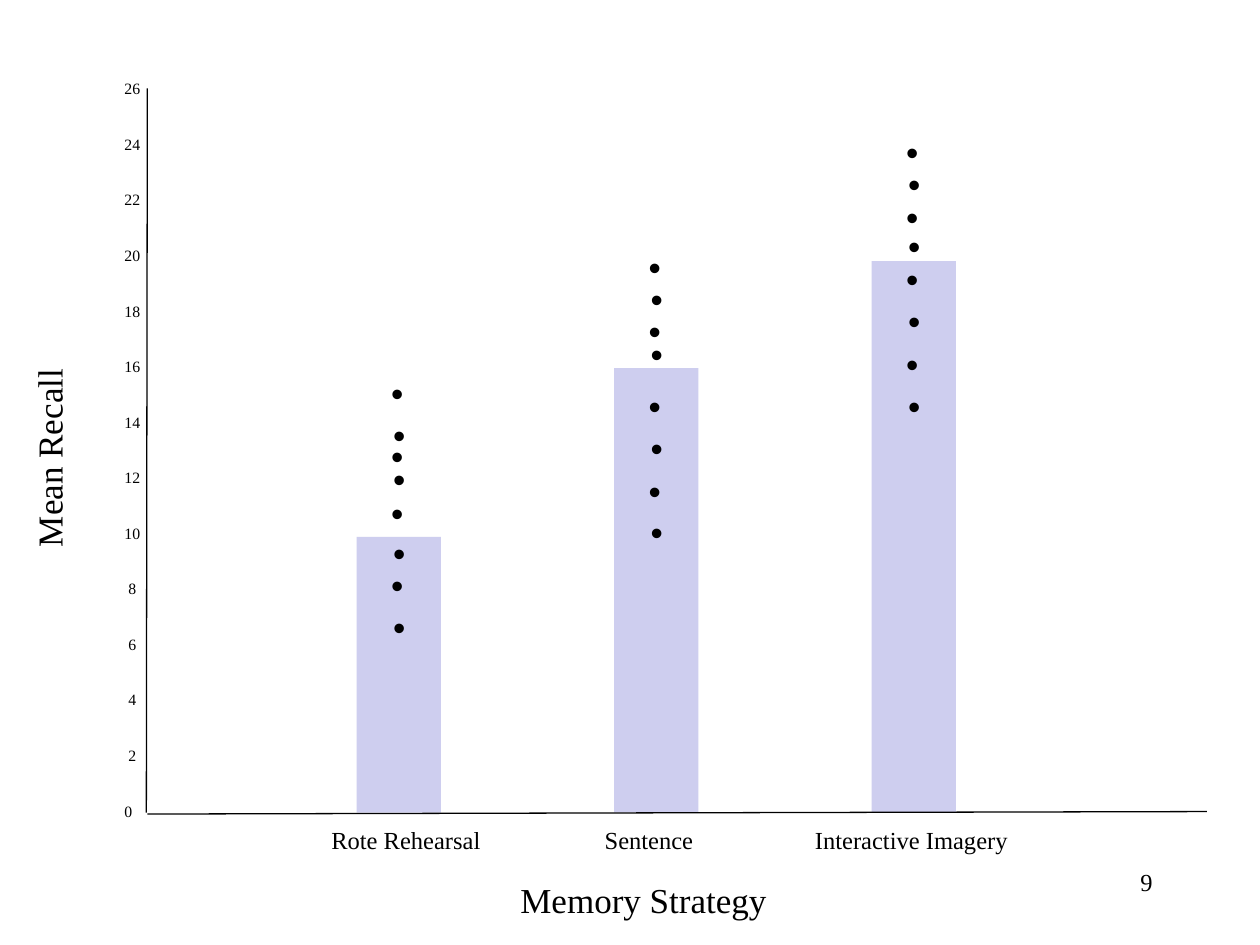
from pptx import Presentation
from pptx.dml.color import RGBColor
from pptx.enum.shapes import MSO_CONNECTOR, MSO_SHAPE
from pptx.enum.text import MSO_AUTO_SIZE, PP_ALIGN
from pptx.oxml.ns import qn
from pptx.util import Cm, Pt
from lxml import etree

RECT = MSO_SHAPE.RECTANGLE
STRAIGHT = MSO_CONNECTOR.STRAIGHT
GROW = MSO_AUTO_SIZE.SHAPE_TO_FIT_TEXT
LEFT, CENTER, RIGHT = PP_ALIGN.LEFT, PP_ALIGN.CENTER, PP_ALIGN.RIGHT

THEME = {
    "ink": RGBColor(0x00, 0x00, 0x00),
    "bar": RGBColor(0xCE, 0xCE, 0xEF),
    "serif": "Times New Roman",
    "sans": "Arial",
    "title": 20,
    "category": 14,
    "tick": 9,
    "dot": 20,
    "axis_width": 0.75,
}

# Category, label left and width in cm, mean recall, individual scores
STRATEGIES = [
    ("Rote Rehearsal", 6.43, 3.61, 9.92,
     (15.05, 13.55, 12.8, 11.95, 10.75, 9.3, 8.15, 6.65)),
    ("Sentence", 11.94, 2.34, 16,
     (19.6, 18.45, 17.3, 16.45, 14.6, 13.1, 11.55, 10.05)),
    ("Interactive Imagery", 16.18, 4.45, 19.85,
     (23.75, 22.6, 21.4, 20.35, 19.15, 17.65, 16.1, 14.6)),
]
TICKS = range(0, 27, 2)
AXES = [((2.97, 16.41), (24.33, 16.36)), ((2.95, 16.38), (2.97, 1.78))]

# Lengths in cm
BASELINE, UNIT = 16.38, 0.56
FIRST_BAR_CENTER, BAR_STEP, BAR_WIDTH = 8.04, 5.19, 1.7
DOT_BOX = (0.84, 1.12)
DOT_CENTER_DROP = 0.58
DOT_STAGGER = (-0.03, 0.01)
TICK_BOX = (1.12, 0.64)
TICK_LEFT, ZERO_TICK_TOP = 2.26, 16.03
MARGIN, ONE_DIGIT_MARGIN = 0.25, 0.33


def add_label(shapes, text, box, size, font="serif", align=LEFT, **frame_format):
    """Add a text box; frame_format overrides text frame attributes."""
    frame = shapes.add_textbox(*(Cm(length) for length in box)).text_frame
    frame_format = {"word_wrap": True, "auto_size": GROW, **frame_format}
    for name, value in frame_format.items():
        setattr(frame, name, value)
    paragraph = frame.paragraphs[0]
    paragraph.alignment = align
    run = paragraph.add_run()
    run.text = text
    run.font.color.rgb = THEME["ink"]
    for name, value in {"name": THEME[font], "size": Pt(THEME[size])}.items():
        setattr(run.font, name, value)
    return frame


def add_bar(shapes, center, mean):
    height = mean * UNIT
    bar = shapes.add_shape(RECT, Cm(center - BAR_WIDTH / 2), Cm(BASELINE - height),
                           Cm(BAR_WIDTH), Cm(height))
    bar.shadow.inherit = False
    bar.fill.solid()
    bar.fill.fore_color.rgb = THEME["bar"]
    bar.line.fill.background()


def add_axis(shapes, start, end):
    axis = shapes.add_connector(STRAIGHT, *(Cm(value) for value in start + end))
    axis.line.color.rgb = THEME["ink"]
    axis.line.width = Pt(THEME["axis_width"])
    etree.SubElement(axis.element.spPr, qn("a:effectLst"))


def add_scores(shapes, center, scores):
    """Add a group of dots that sway slightly to either side of the center."""
    group = shapes.add_group_shape().shapes
    width, height = DOT_BOX
    for index, score in enumerate(scores):
        left = center + DOT_STAGGER[index % 2] - width / 2
        top = BASELINE - score * UNIT - DOT_CENTER_DROP
        add_label(group, "•", (left, top, width, height), "dot", "sans", CENTER,
                  word_wrap=False)


def add_ticks(shapes):
    group = shapes.add_group_shape().shapes
    for value in TICKS:
        margin = ONE_DIGIT_MARGIN if 0 < value < 10 else MARGIN
        add_label(group, str(value), (TICK_LEFT, ZERO_TICK_TOP - value * UNIT, *TICK_BOX),
                  "tick", margin_left=Cm(margin))


def main():
    deck = Presentation()
    deck.slide_width, deck.slide_height = Cm(25.4), Cm(19.05)
    shapes = deck.slides.add_slide(deck.slide_layouts[6]).shapes

    add_label(shapes, "Memory Strategy", (10.24, 17.58, 5.72, 1.12), "title")
    recall = add_label(shapes, "Mean Recall", (0.43, 6.15, 1.37, 5.13), "title")
    recall._txBody.bodyPr.set("vert", "vert270")

    centers = [FIRST_BAR_CENTER + i * BAR_STEP for i in range(len(STRATEGIES))]
    for center, (name, left, width, mean, _) in zip(centers, STRATEGIES):
        add_label(shapes, name, (left, 16.51, width, 0.86), "category")
        add_bar(shapes, center, mean)
    for start, end in AXES:
        add_axis(shapes, start, end)
    add_ticks(shapes)
    for center, (*_, scores) in zip(centers, STRATEGIES):
        add_scores(shapes, center, scores)

    add_label(shapes, "9", (18.21, 17.35, 5.28, 1.27), "category", align=RIGHT,
              auto_size=MSO_AUTO_SIZE.NONE)
    deck.save("out.pptx")


if __name__ == "__main__":
    main()
